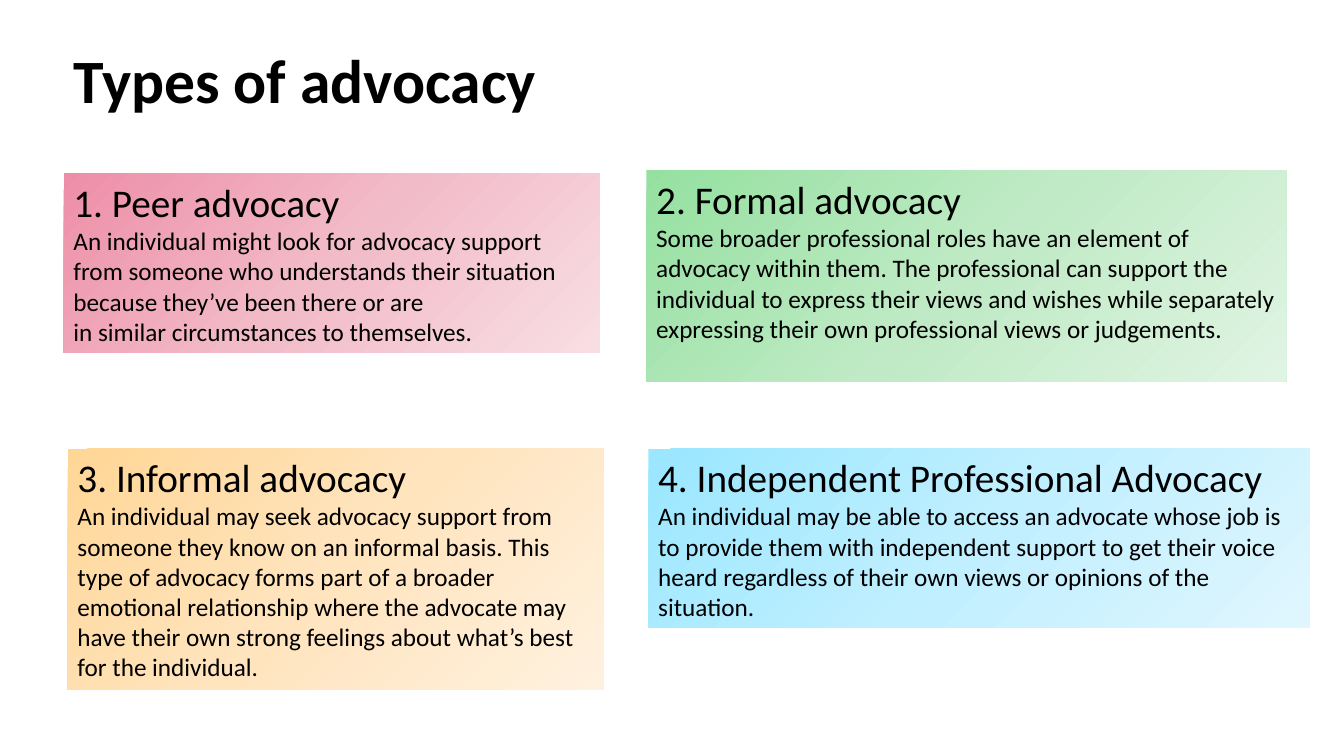
"""Build a slide that describes four types of advocacy."""
from copy import deepcopy

from pptx import Presentation
from pptx.dml.color import RGBColor
from pptx.enum.shapes import MSO_SHAPE
from pptx.enum.text import MSO_ANCHOR, PP_ALIGN
from pptx.oxml.ns import qn
from pptx.util import Inches, Pt

TITLE = "Types of advocacy"
FONT = "Calibri"
COLORS = {
    "text": "000000",
    "pink": ("ED8EA7", "F2BBC8", "F8DEE4"),
    "green": ("95E0A0", "BFEAC5", "E0F4E3"),
    "orange": ("FFD696", "FFE4BE", "FFF1DF"),
    "blue": ("9AE7FF", "C0EFFF", "E0F6FE"),
}
CARDS = [
    ("pink", (0.63, 1.72, 5.32, 1.78), "1. Peer advocacy", [
        "An individual might look for advocacy support",
        "from someone who understands their situation because they’ve been there or are\n"
        "in similar circumstances to themselves."]),
    ("green", (6.41, 1.69, 6.35, 2.09), "2. Formal advocacy", [
        "Some broader professional roles have an element of advocacy within them. "
        "The professional can support the individual to express their views and wishes "
        "while separately expressing their own professional views or judgements."]),
    ("orange", (0.67, 4.45, 5.32, 2.39), "3. Informal advocacy", [
        "An individual may seek advocacy support from someone they know on an informal "
        "basis. This type of advocacy forms part of a broader emotional relationship "
        "where the advocate may have their own strong feelings about what’s best for "
        "the individual."]),
    ("blue", (6.43, 4.45, 6.56, 1.78), "4. Independent Professional Advocacy", [
        "An individual may be able to access an advocate whose job is to provide them "
        "with independent support to get their voice heard regardless of their own "
        "views or opinions of the situation."]),
]


def write(p, text, size, bold=False):
    p.text = text
    p.alignment = PP_ALIGN.LEFT
    for r in p.runs:
        r.font.name = FONT
        r.font.size = Pt(size)
        r.font.bold = bold
        r.font.color.rgb = RGBColor.from_string(COLORS["text"])


def fill_gradient(s, colors):
    s.fill.gradient()
    s.fill.gradient_angle = 315
    stop_list = s._element.spPr.find(qn("a:gradFill")).find(qn("a:gsLst"))
    stop_list.insert(1, deepcopy(stop_list[0]))
    for i, (stop, color) in enumerate(zip(s.fill.gradient_stops, colors)):
        stop.position = i / (len(colors) - 1)
        stop.color.rgb = RGBColor.from_string(color)


def add_card(slide, color, box, heading, body):
    s = slide.shapes.add_shape(MSO_SHAPE.RECTANGLE, *map(Inches, box))
    s.shadow.inherit = False
    s.line.fill.background()
    fill_gradient(s, COLORS[color])
    tf = s.text_frame
    tf.word_wrap = True
    tf.vertical_anchor = MSO_ANCHOR.TOP
    write(tf.paragraphs[0], heading, 28)
    for text in body:
        write(tf.add_paragraph(), text, 18)


def main():
    prs = Presentation()
    prs.slide_width, prs.slide_height = Inches(13.33), Inches(7.5)
    slide = prs.slides.add_slide(prs.slide_layouts[5])

    title = slide.shapes.title
    title.left, title.top, title.width, title.height = map(Inches, (0.63, 0.17, 11.79, 1.31))
    tf = title.text_frame
    tf.vertical_anchor = MSO_ANCHOR.MIDDLE
    write(tf.paragraphs[0], TITLE, 44, bold=True)
    tf.paragraphs[0].line_spacing = 0.9

    for card in CARDS:
        add_card(slide, *card)
    prs.save("out.pptx")


if __name__ == "__main__":
    main()
